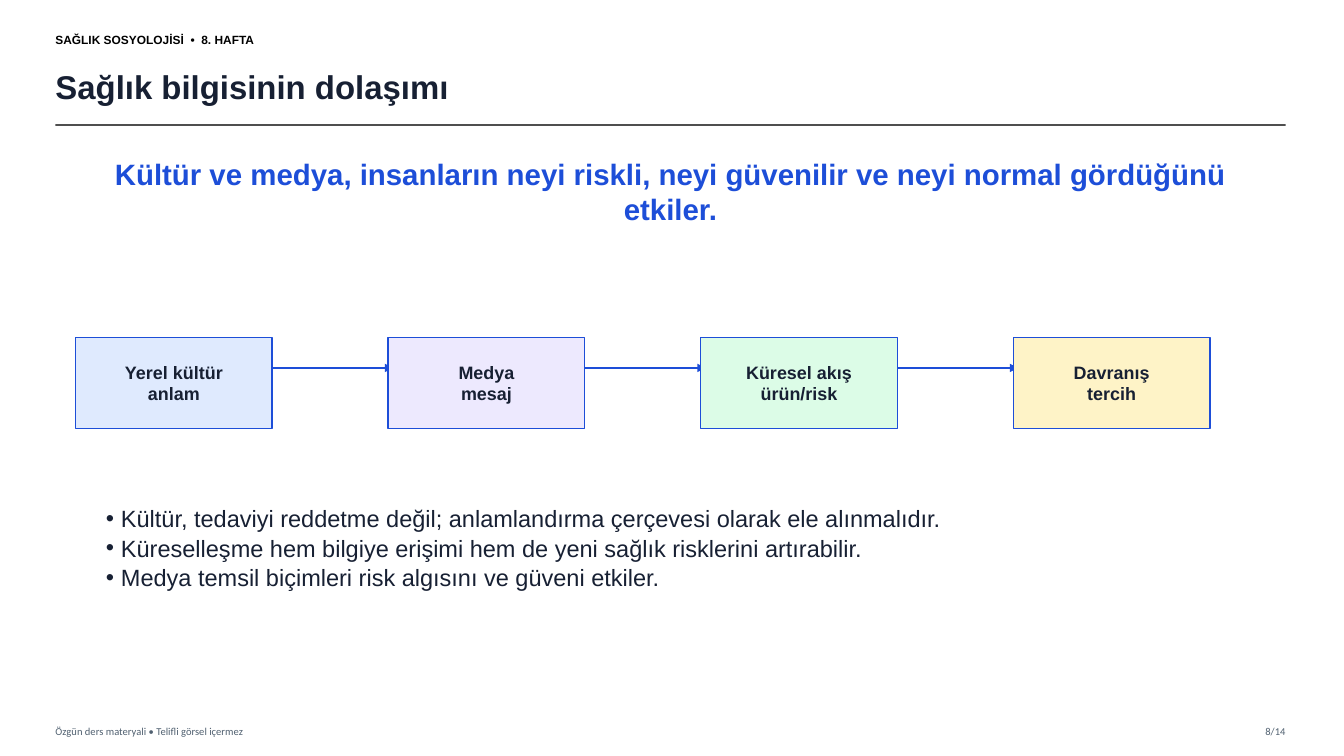
from lxml import etree
from pptx import Presentation
from pptx import util as u
from pptx.dml.color import RGBColor
from pptx.enum import shapes, text
from pptx.oxml.ns import qn

HEAD = "SAĞLIK SOSYOLOJİSİ  •  8. HAFTA"
TITLE = "Sağlık bilgisinin dolaşımı"
CLAIM = "Kültür ve medya, insanların neyi riskli, neyi güvenilir ve neyi normal gördüğünü etkiler."
STEPS = [
    (["Yerel kültür", "anlam"], "DFEAFE"),
    (["Medya", "mesaj"], "EDE9FE"),
    (["Küresel akış", "ürün/risk"], "DCFCE7"),
    (["Davranış", "tercih"], "FEF3C7"),
]
POINTS = [
    "Kültür, tedaviyi reddetme değil; anlamlandırma çerçevesi olarak ele alınmalıdır.",
    "Küreselleşme hem bilgiye erişimi hem de yeni sağlık risklerini artırabilir.",
    "Medya temsil biçimleri risk algısını ve güveni etkiler.",
]
FOOT = "Özgün ders materyali • Telifli görsel içermez"
PAGE = "8/14"

INK, BLUE, GREY = "172033", "1D4ED8", "506070"
LEFT, RIGHT = 55, 1275
STEP_X, STEP_Y, STEP_W, STEP_H, PITCH = 75, 335, 195, 90, 310
FLOW_Y, INSET, OVER = 365, 15, 5
INDENT = 15

ALIGN = text.PP_ALIGN
MID, TOP = text.MSO_ANCHOR.MIDDLE, text.MSO_ANCHOR.TOP


def px(n):
    """Turn px, 100 to the inch, into EMU."""
    return u.Emu(n * 9144)


def color(code):
    return RGBColor.from_string(code)


def place(shape, x, y, w, h):
    shape.left, shape.top, shape.width, shape.height = map(px, (x, y, w, h))
    return shape


def write(shape, lines, size, ink=INK, font="Arial", bold=False,
          align=ALIGN.LEFT, anchor=MID, bullet=False, after=0):
    frame = shape.text_frame
    frame.word_wrap = True
    frame.auto_size = text.MSO_AUTO_SIZE.NONE
    frame.vertical_anchor = anchor
    frame.margin_left = frame.margin_right = 0
    frame.margin_top = frame.margin_bottom = 0
    frame.text = "\n".join(lines)
    for para in frame.paragraphs:
        para.alignment = align
        para.space_before = u.Pt(0)
        para.space_after = u.Pt(after)
        if bullet:
            props = para._p.get_or_add_pPr()
            props.set("marL", str(px(INDENT)))
            props.set("indent", str(-px(INDENT)))
            etree.SubElement(props, qn("a:buChar"), char="•")
        para.font.size = u.Pt(size)
        para.font.name = font
        para.font.bold = bold
        para.font.color.rgb = color(ink)


def label(box, line, size, **form):
    write(place(slide.shapes.add_textbox(0, 0, 0, 0), *box), [line], size, **form)


def rule(x1, x2, y, ink, width):
    """Draw a level line without shadow and return its a:ln element."""
    link = slide.shapes.add_connector(
        shapes.MSO_CONNECTOR.STRAIGHT, px(x1), px(y), px(x2), px(y))
    link.line.color.rgb = color(ink)
    link.line.width = u.Pt(width)
    etree.SubElement(link._element.spPr, qn("a:effectLst"))
    return link.line._get_or_add_ln()


deck = Presentation()
deck.slide_width, deck.slide_height = px(1333), px(750)
slide = deck.slides.add_slide(deck.slide_layouts[1])
title, body = slide.placeholders

label((LEFT, 25, 360, 28), HEAD, 8.5, ink="000000", bold=True)
write(place(title, LEFT, 58, 1195, 55), [TITLE], 23.5, bold=True)
line = rule(LEFT, RIGHT, 124, "333333", 1.2)
etree.SubElement(line.find(".//" + qn("a:srgbClr")), qn("a:alpha"), val="85000")
label((LEFT, 714, 600, 22), FOOT, 7.5, ink=GREY, font="Calibri")
label((RIGHT - 65, 714, 65, 22), PAGE, 7.5, ink=GREY, font="Calibri", align=ALIGN.RIGHT)

starts = [STEP_X + i * PITCH for i in range(len(STEPS))]
for x, after in zip(starts, starts[1:]):
    flow = rule(x + STEP_W - INSET, after + OVER, FLOW_Y, BLUE, 2)
    etree.SubElement(flow, qn("a:tailEnd"), type="triangle")

for x, (lines, fill) in zip(starts, STEPS):
    step = slide.shapes.add_shape(
        shapes.MSO_SHAPE.RECTANGLE, px(x), px(STEP_Y), px(STEP_W), px(STEP_H))
    step.shadow.inherit = False
    step.fill.solid()
    step.fill.fore_color.rgb = color(fill)
    step.line.color.rgb = color(BLUE)
    step.line.width = u.Pt(1)
    write(step, lines, 12.8, bold=True, align=ALIGN.CENTER)

label((80, 155, 1170, 105), CLAIM, 21, ink=BLUE, bold=True, align=ALIGN.CENTER, anchor=TOP)
write(place(body, 105, 500, 1100, 125), POINTS, 16.8, anchor=TOP, bullet=True, after=1)

deck.save("out.pptx")
